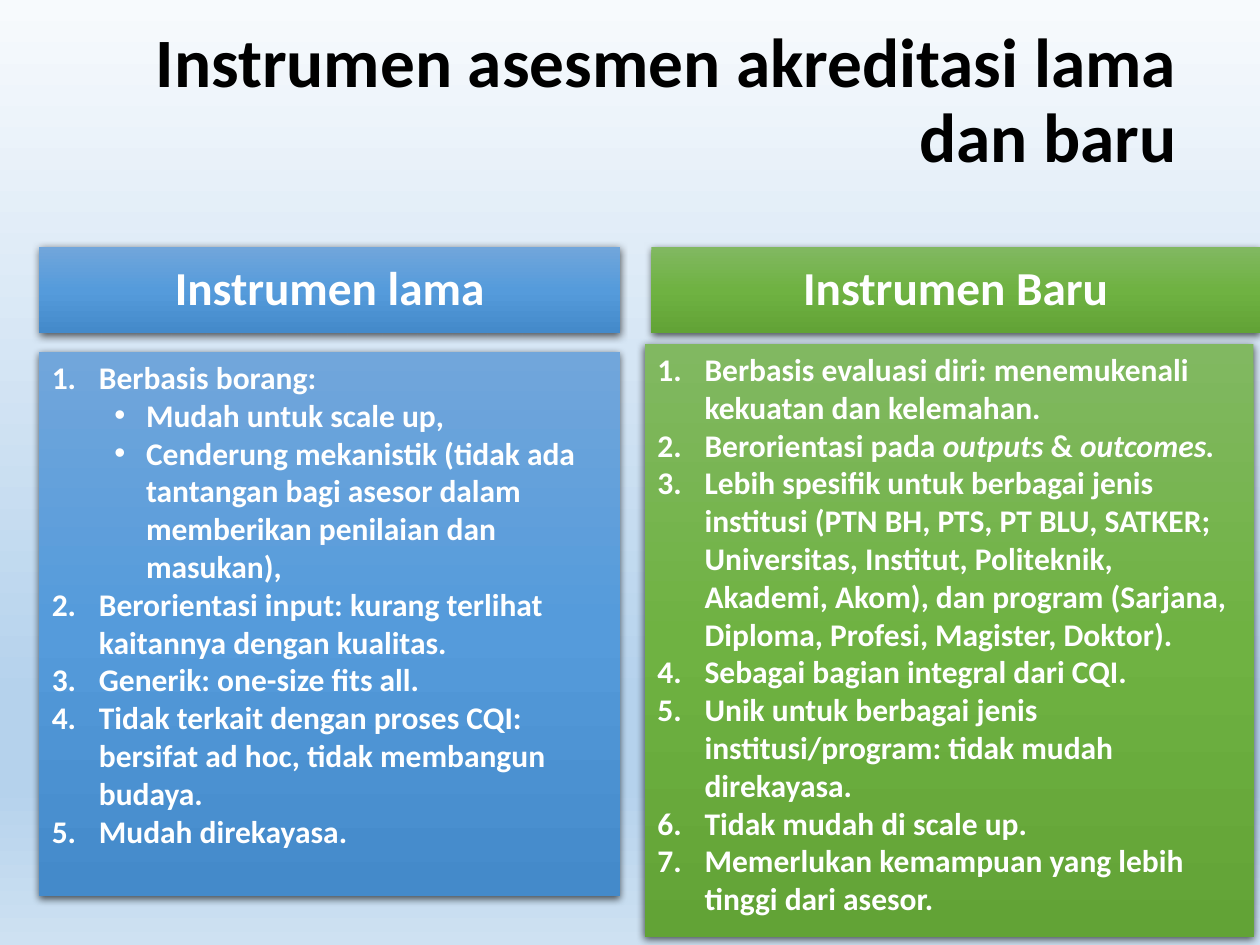
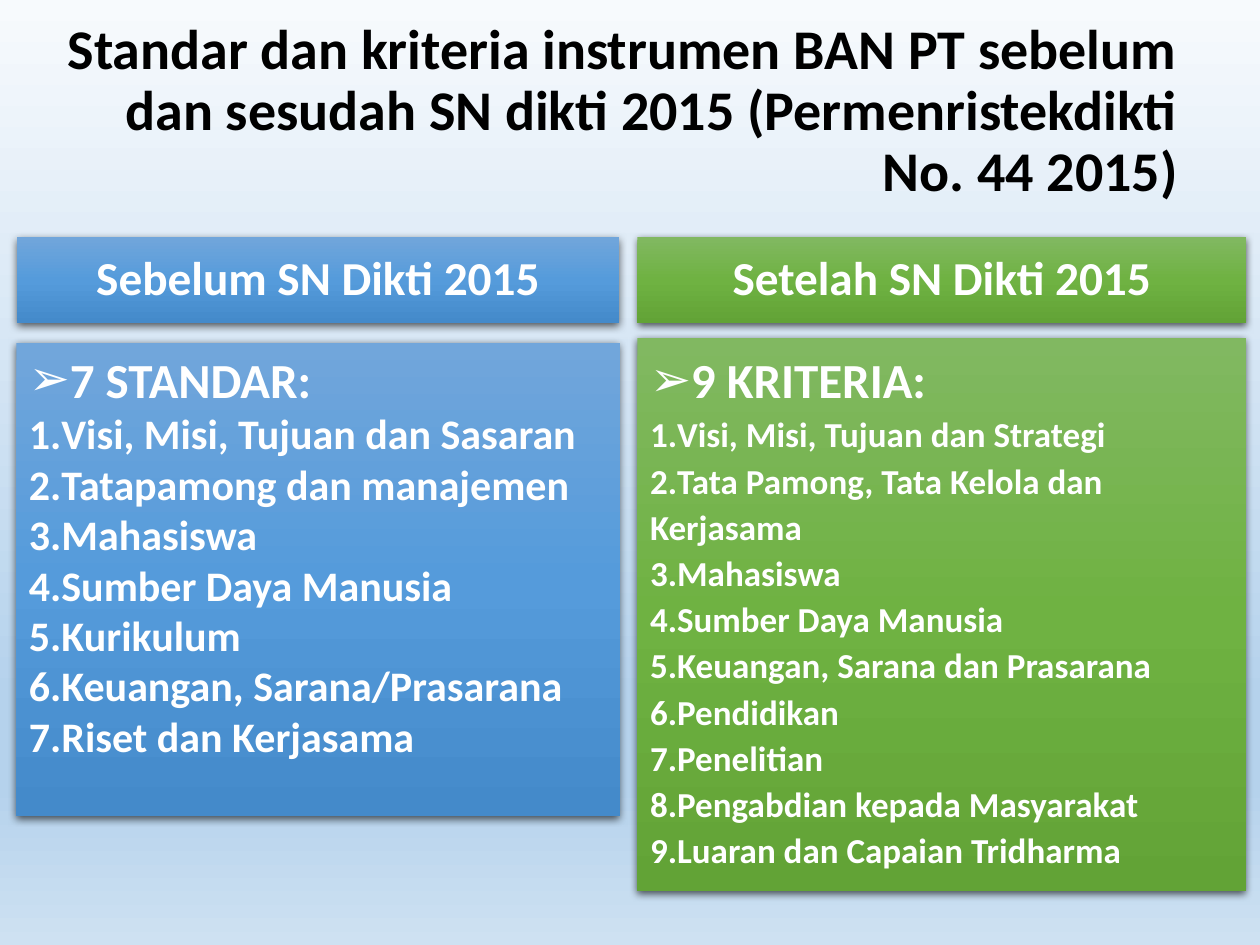
from dataclasses import dataclass

import pptx
import pptx.dml.color
import pptx.enum.text
import pptx.oxml
import pptx.oxml.ns
import pptx.util
from lxml import etree

Cm = pptx.util.Cm
Pt = pptx.util.Pt
qn = pptx.oxml.ns.qn
Align = pptx.enum.text.PP_ALIGN
Anchor = pptx.enum.text.MSO_ANCHOR

Stops = tuple[tuple[int, str], ...]


@dataclass(frozen=True)
class Theme:
    font: str = "Calibri"
    title_color: str = "000000"
    panel_text: str = "FFFFFF"
    background: Stops = ((0, "F7FAFD"), (74, "B5D2EC"), (83, "B5D2EC"), (100, "CEE1F2"))
    blue: Stops = ((0, "71A6DB"), (50, "559BDB"), (100, "448ACA"))
    green: Stops = ((0, "81B861"), (50, "6FB242"), (100, "62A336"))
    header_size: float = 27
    lead_size: float = 28
    list_size: float = 18
    old_standards_size: float = 24
    new_criteria_size: float = 20
    tight_spacing: float = 0.9
    header_space_before: float = 10


THEME = Theme()


@dataclass(frozen=True)
class Box:
    """Left, top, width and height in centimetres."""
    left: float
    top: float
    width: float
    height: float


@dataclass(frozen=True)
class ListStyle:
    """An empty bullet means automatic numbering; lengths are centimetres."""
    size: float
    margin: float
    hanging: float
    bullet: str = ""
    level: int = 0
    line_spacing: float = 1.0


@dataclass(frozen=True)
class Column:
    heading: str
    heading_box: Box
    list_box: Box
    items: list[tuple[str, ListStyle]]


@dataclass(frozen=True)
class Comparison:
    title: str
    title_box: Box
    title_size: float
    old: Column
    new: Column


def styled(style: ListStyle, *texts: str) -> list[tuple[str, ListStyle]]:
    return [(text, style) for text in texts]


# List styles
NUMBERED = ListStyle(THEME.list_size, 0.95, 0.95)
SUB_BULLET = ListStyle(THEME.list_size, 1.9, 0.64, "•", level=1)
OLD_LEAD = ListStyle(THEME.lead_size, 0, 0.64, "➢")
OLD_STANDARD = ListStyle(THEME.old_standards_size, 0, 0.95)
NEW_LEAD = ListStyle(THEME.lead_size, 0, 0.64, "➢", line_spacing=1.1)
NEW_CRITERION = ListStyle(THEME.new_criteria_size, 0, 0.95, line_spacing=1.1)

# Slide content; asterisks enclose italics
COMPARISONS = [
    Comparison(
        "Instrumen asesmen akreditasi lama dan baru",
        Box(1.04, 0.51, 22.94, 3.1), 39.6,
        Column(
            "Instrumen lama", Box(0.79, 4.98, 11.71, 1.73), Box(0.79, 7.09, 11.71, 10.97),
            styled(NUMBERED, "Berbasis borang:")
            + styled(
                SUB_BULLET,
                "Mudah untuk scale up,",
                "Cenderung mekanistik (tidak ada tantangan bagi asesor dalam "
                "memberikan penilaian dan masukan),",
            )
            + styled(
                NUMBERED,
                "Berorientasi input: kurang terlihat kaitannya dengan kualitas.",
                "Generik: one-size fits all.",
                "Tidak terkait dengan proses CQI: bersifat ad hoc, tidak membangun budaya.",
                "Mudah direkayasa.",
            ),
        ),
        Column(
            "Instrumen Baru", Box(13.13, 4.98, 12.27, 1.73), Box(13, 6.93, 12.27, 11.96),
            styled(
                NUMBERED,
                "Berbasis evaluasi diri: menemukenali kekuatan dan kelemahan.",
                "Berorientasi pada *outputs* & *outcomes.*",
                "Lebih spesifik untuk berbagai jenis institusi (PTN BH, PTS, PT BLU, SATKER; "
                "Universitas, Institut, Politeknik, Akademi, Akom), dan program (Sarjana, "
                "Diploma, Profesi, Magister, Doktor).",
                "Sebagai bagian integral dari CQI.",
                "Unik untuk berbagai jenis institusi/program: tidak mudah direkayasa.",
                "Tidak mudah di scale up.",
                "Memerlukan kemampuan yang lebih tinggi dari asesor.",
            ),
        ),
    ),
    Comparison(
        "Standar dan kriteria instrumen BAN PT sebelum dan sesudah SN dikti 2015 "
        "(Permenristekdikti No. 44 2015)",
        Box(0.99, 0.46, 23.01, 3.61), 32,
        Column(
            "Sebelum SN Dikti 2015", Box(0.34, 4.78, 12.14, 1.73), Box(0.33, 6.91, 12.17, 9.55),
            styled(OLD_LEAD, "7 STANDAR:")
            + styled(
                OLD_STANDARD,
                "Visi, Misi, Tujuan dan Sasaran",
                "Tatapamong dan manajemen",
                "Mahasiswa",
                "Sumber Daya Manusia",
                "Kurikulum",
                "Keuangan, Sarana/Prasarana",
                "Riset dan Kerjasama",
            ),
        ),
        Column(
            "Setelah SN Dikti 2015", Box(12.85, 4.78, 12.27, 1.73), Box(12.85, 6.81, 12.27, 11.15),
            styled(NEW_LEAD, "9 KRITERIA:")
            + styled(
                NEW_CRITERION,
                "Visi, Misi, Tujuan dan Strategi",
                "Tata Pamong, Tata Kelola dan Kerjasama",
                "Mahasiswa",
                "Sumber Daya Manusia",
                "Keuangan, Sarana dan Prasarana",
                "Pendidikan",
                "Penelitian",
                "Pengabdian kepada Masyarakat",
                "Luaran dan Capaian Tridharma",
            ),
        ),
    ),
]


def set_gradient(fill, properties, stops: Stops) -> None:
    """Fill from top to bottom; properties is the element that holds the fill."""
    fill.gradient()
    fill.gradient_angle = 270
    stop_list = properties.find(qn("a:gradFill")).find(qn("a:gsLst"))
    for stop in list(stop_list):
        stop_list.remove(stop)
    for percent, color in stops:
        stop = etree.SubElement(stop_list, qn("a:gs"), pos=str(percent * 1000))
        etree.SubElement(stop, qn("a:srgbClr"), val=color)


def add_panel_shadow(shape) -> None:
    effects = etree.SubElement(shape.element.spPr, qn("a:effectLst"))
    shadow = etree.SubElement(
        effects, qn("a:outerShdw"), blurRad=str(Pt(4.5)), dist=str(Pt(1.5)),
        dir="5400000", algn="ctr", rotWithShape="0",
    )
    color = etree.SubElement(shadow, qn("a:srgbClr"), val="000000")
    etree.SubElement(color, qn("a:alpha"), val="63000")


def place(shape, box: Box, anchor) -> None:
    shape.left, shape.top = Cm(box.left), Cm(box.top)
    shape.width, shape.height = Cm(box.width), Cm(box.height)
    frame = shape.text_frame
    frame.word_wrap = True
    frame.auto_size = pptx.enum.text.MSO_AUTO_SIZE.NONE
    frame.vertical_anchor = anchor


def format_paragraph(paragraph, size: float, color: str, align, line_spacing: float,
                     space_before: float = 0) -> None:
    paragraph.alignment = align
    paragraph.line_spacing = line_spacing
    paragraph.space_before = Pt(space_before)
    font = paragraph.font
    font.name, font.size, font.bold = THEME.font, Pt(size), True
    font.color.rgb = pptx.dml.color.RGBColor.from_string(color)


def set_bullet(paragraph, style: ListStyle) -> None:
    properties = paragraph._p.get_or_add_pPr()
    properties.set("marL", str(Cm(style.margin)))
    properties.set("indent", str(-Cm(style.hanging)))
    if style.bullet:
        etree.SubElement(properties, qn("a:buFont"), typeface="Arial")
        etree.SubElement(properties, qn("a:buChar"), char=style.bullet)
    else:
        etree.SubElement(properties, qn("a:buFont"), typeface="+mj-lt")
        etree.SubElement(properties, qn("a:buAutoNum"), type="arabicPeriod")


def style_panel(shape, box: Box, stops: Stops, anchor) -> None:
    place(shape, box, anchor)
    set_gradient(shape.fill, shape.element.spPr, stops)
    shape.line.fill.background()
    add_panel_shadow(shape)


def fill_column(heading, body, column: Column, stops: Stops) -> None:
    # Heading band
    style_panel(heading, column.heading_box, stops, Anchor.MIDDLE)
    heading.text_frame.text = column.heading
    format_paragraph(heading.text_frame.paragraphs[0], THEME.header_size, THEME.panel_text,
                     Align.CENTER, THEME.tight_spacing, THEME.header_space_before)

    # List panel
    style_panel(body, column.list_box, stops, Anchor.TOP)
    frame = body.text_frame
    for index, (text, style) in enumerate(column.items):
        paragraph = frame.add_paragraph() if index else frame.paragraphs[0]
        paragraph.level = style.level
        set_bullet(paragraph, style)
        format_paragraph(paragraph, style.size, THEME.panel_text, Align.LEFT, style.line_spacing)
        for part, words in enumerate(text.split("*")):
            if words:
                run = paragraph.add_run()
                run.text = words
                if part % 2:
                    run.font.italic = True


def add_comparison(presentation, comparison: Comparison) -> None:
    layout = presentation.slide_layouts.get_by_name("Comparison")
    slide = presentation.slides.add_slide(layout)
    title, old_heading, old_list, new_heading, new_list = slide.placeholders
    place(title, comparison.title_box, Anchor.MIDDLE)
    title.text_frame.text = comparison.title
    format_paragraph(title.text_frame.paragraphs[0], comparison.title_size, THEME.title_color,
                     Align.RIGHT, THEME.tight_spacing)
    fill_column(old_heading, old_list, comparison.old, THEME.blue)
    fill_column(new_heading, new_list, comparison.new, THEME.green)


def main() -> None:
    presentation = pptx.Presentation()
    presentation.slide_width, presentation.slide_height = Cm(25.4), Cm(19.05)

    # Shared background
    master = presentation.slide_master
    background_fill = master.background.fill
    background = master.element.find(qn("p:cSld")).find(qn("p:bg")).find(qn("p:bgPr"))
    set_gradient(background_fill, background, THEME.background)

    for comparison in COMPARISONS:
        add_comparison(presentation, comparison)
    presentation.save("out.pptx")


if __name__ == "__main__":
    main()
